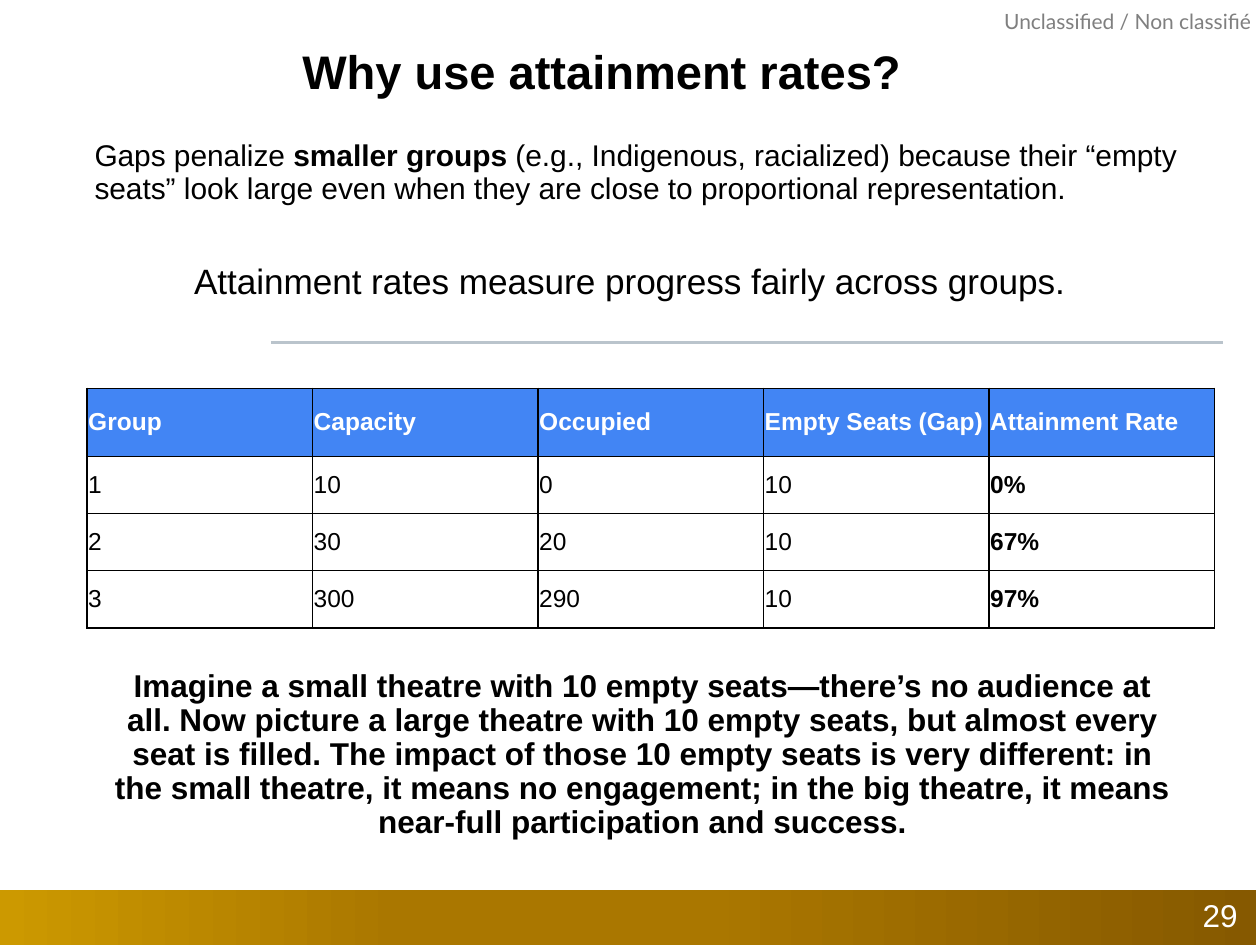
from lxml.etree import SubElement
from pptx import Presentation
from pptx.dml.color import RGBColor
from pptx.enum.shapes import MSO_CONNECTOR, MSO_SHAPE
from pptx.enum.text import MSO_ANCHOR, PP_ALIGN
from pptx.oxml import parse_xml
from pptx.oxml.ns import nsdecls, qn
from pptx.util import Inches, Pt

# Content
TITLE = "Why use attainment rates?"
MARKING = "Unclassified / Non classifié"
PAGE_NUMBER = "29"
# Each span is (text, bold)
GAPS = [
    ("Gaps penalize ", False),
    ("smaller groups", True),
    (" (e.g., Indigenous, racialized) because their “empty seats” look large "
     "even when they are close to proportional representation.", False),
]
FAIRNESS = "Attainment rates measure progress fairly across groups."
THEATRE = (
    "Imagine a small theatre with 10 empty seats—there’s no audience at all. "
    "Now picture a large theatre with 10 empty seats, but almost every seat is "
    "filled. The impact of those 10 empty seats is very different: in the small "
    "theatre, it means no engagement; in the big theatre, it means near-full "
    "participation and success."
)
ROWS = [
    ("Group", "Capacity", "Occupied", "Empty Seats (Gap)", "Attainment Rate"),
    ("1", "10", "0", "10", "0%"),
    ("2", "30", "20", "10", "67%"),
    ("3", "300", "290", "10", "97%"),
]

BLACK, WHITE, GRAY = "000000", "FFFFFF", "7F7F7F"
HEADER_BLUE, RULE_GRAY = "4285F4", "BAC4CC"
FOOTER_STOPS = [(0, "CC9900"), (32, "AA7700"), (58, "A97600"), (100, "865900")]


def color(value):
    return RGBColor.from_string(value)


def write(frame, text, size=18, font="Arial", fill=BLACK, bold=False,
          align=PP_ALIGN.LEFT, spacing=0.9):
    """Write a string, or a list of (text, bold) spans, as one paragraph."""
    para = frame.paragraphs[0]
    para.alignment = align
    para.line_spacing = spacing
    spans = [(text, bold)] if isinstance(text, str) else text
    for words, is_bold in spans:
        span = para.add_run()
        span.text = words
        span.font.name = font
        span.font.size = Pt(size)
        span.font.bold = is_bold
        span.font.color.rgb = color(fill)


def add_text(page, place, text, inset=(0.1, 0.05), anchor=MSO_ANCHOR.TOP,
             wrap=True, **text_format):
    box = page.shapes.add_textbox(*map(Inches, place))
    frame = box.text_frame
    frame.word_wrap = wrap
    frame.vertical_anchor = anchor
    frame.margin_left = frame.margin_right = Inches(inset[0])
    frame.margin_top = frame.margin_bottom = Inches(inset[1])
    write(frame, text, **text_format)


def add_footer(page):
    band = page.shapes.add_shape(
        MSO_SHAPE.RECTANGLE, 0, Inches(7.06), Inches(9.97), Inches(0.45))
    band.shadow.inherit = False
    band.line.fill.background()
    band.fill.gradient()
    band.fill.gradient_angle = 0
    stops = band.fill._fill._gradFill.find(qn("a:gsLst"))
    for stop in list(stops):
        stops.remove(stop)
    for percent, value in FOOTER_STOPS:
        stop = SubElement(stops, qn("a:gs"), pos=str(percent * 1000))
        SubElement(stop, qn("a:srgbClr"), val=value)


def add_rule(page):
    rule = page.shapes.add_connector(
        MSO_CONNECTOR.STRAIGHT, *map(Inches, (2.15, 2.72, 9.71, 2.72)))
    rule.line.color.rgb = color(RULE_GRAY)
    rule.line.width = Pt(1.5)
    SubElement(rule._element.spPr, qn("a:effectLst"))


def add_borders(cell):
    properties = cell._tc.get_or_add_tcPr()
    for side in ("lnL", "lnR", "lnT", "lnB"):
        properties.append(parse_xml(
            f'<a:{side} {nsdecls("a")} w="{Pt(0.75)}"><a:solidFill>'
            f'<a:srgbClr val="{BLACK}"/></a:solidFill></a:{side}>'))


def add_seat_table(page):
    place = map(Inches, (0.69, 3.08, 8.95, 1.9))
    table = page.shapes.add_table(len(ROWS), len(ROWS[0]), *place).table
    table.first_row = table.horz_banding = False
    for r, row in enumerate(ROWS):
        header = r == 0
        table.rows[r].height = Inches(0.54 if header else 0.455)
        for c, text in enumerate(row):
            cell = table.cell(r, c)
            cell.margin_left = cell.margin_right = Inches(0.01)
            cell.margin_top = cell.margin_bottom = Inches(0.01)
            cell.vertical_anchor = MSO_ANCHOR.MIDDLE
            add_borders(cell)
            if header:
                cell.fill.solid()
                cell.fill.fore_color.rgb = color(HEADER_BLUE)
            else:
                cell.fill.background()
            write(cell.text_frame, text, size=14, spacing=1,
                  fill=WHITE if header else BLACK,
                  bold=header or c == len(row) - 1)


def main():
    deck = Presentation()
    deck.slide_width, deck.slide_height = Inches(10), Inches(7.5)
    page = deck.slides.add_slide(deck.slide_layouts[6])

    # Footer band and classification marking
    add_footer(page)
    add_text(page, (7.97, 0.07, 2, 0.2), MARKING, inset=(0, 0), wrap=False,
             size=12, font="Lato", fill=GRAY, spacing=1)

    # Theatre comparison below the table
    add_text(page, (0.8, 5.07, 8.6, 1.85), THEATRE, anchor=MSO_ANCHOR.MIDDLE,
             bold=True, align=PP_ALIGN.CENTER)
    add_seat_table(page)

    # Argument above the table
    add_text(page, (0.68, 1.05, 9.05, 1.1), GAPS, inset=(0.07, 0.07), size=17.1)
    add_text(page, (1.47, 2.03, 7.56, 0.34), FAIRNESS, inset=(0.07, 0.07),
             size=20.1)
    add_rule(page)

    # Title and page number
    add_text(page, (0.15, 0.29, 9.25, 0.61), TITLE, inset=(0.1, 0.1),
             size=26.9, bold=True, align=PP_ALIGN.CENTER)
    add_text(page, (7.59, 7.08, 2.33, 0.4), PAGE_NUMBER,
             anchor=MSO_ANCHOR.MIDDLE, fill=WHITE, align=PP_ALIGN.RIGHT)

    deck.save("out.pptx")


if __name__ == "__main__":
    main()
